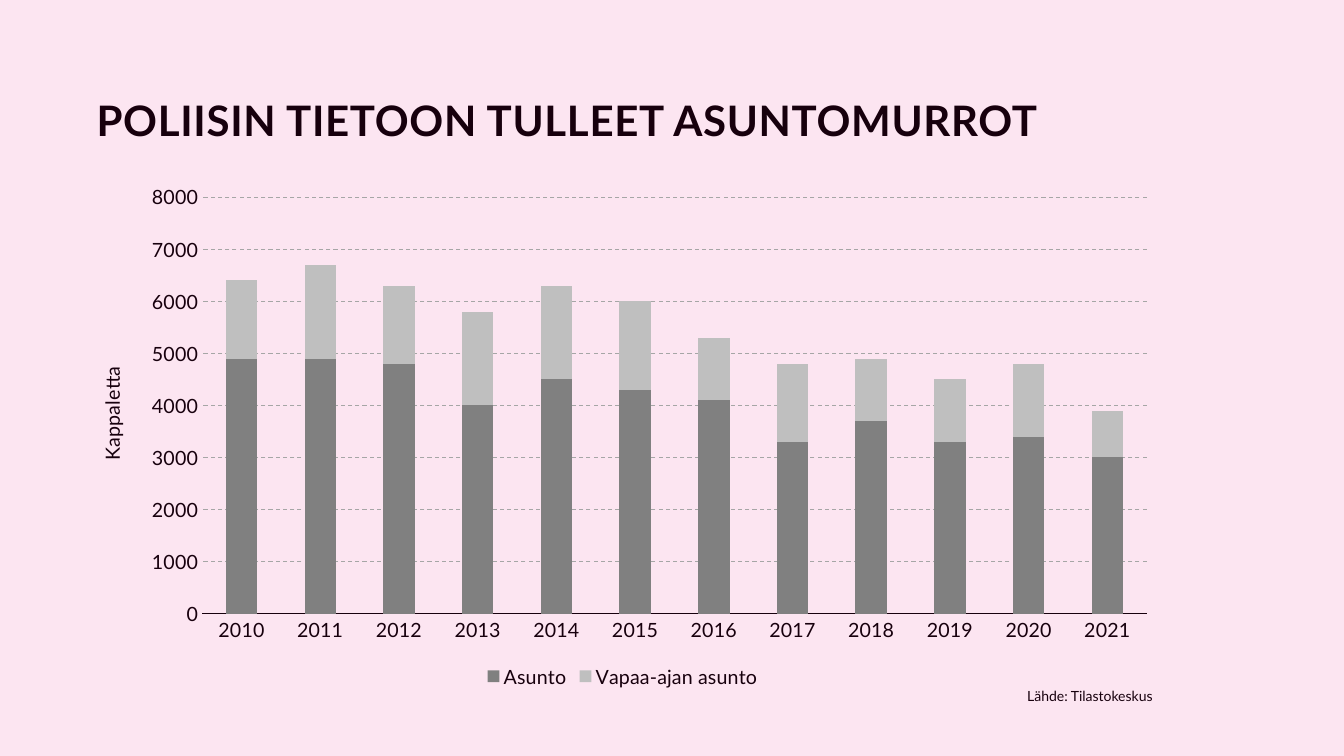
from dataclasses import dataclass

from lxml import etree
from pptx import Presentation
from pptx import util as u
from pptx.chart import data as cd
from pptx.dml.color import RGBColor
from pptx.enum import chart as ch, dml, text
from pptx.oxml import ns


@dataclass(frozen=True)
class Theme:
    font: str = "Lato"
    ground: str = "FCE5F1"
    ink: str = "17000D"
    grid: str = "A6A6A6"
    head: float = 30
    body: float = 14
    note: float = 10
    rule: float = 0.75


@dataclass(frozen=True)
class Box:
    """Place on the slide, in percent of its width and height."""
    left: float
    top: float
    width: float
    height: float


@dataclass(frozen=True)
class Series:
    name: str
    color: str
    vals: tuple[int, ...]


THEME = Theme()
WIDTH, HEIGHT = u.Inches(13.33), u.Inches(7.5)
YEARS = [str(year) for year in range(2010, 2022)]
HOMES = [
    Series("Asunto", "808080", (4900, 4900, 4800, 4000, 4500, 4300,
                                4100, 3300, 3700, 3300, 3400, 3000)),
    Series("Vapaa-ajan asunto", "BFBFBF", (1500, 1800, 1500, 1800, 1800, 1700,
                                           1200, 1500, 1200, 1200, 1400, 900)),
]
# Inner plot area as shares of the chart frame
PLOT = {"x": 0.115, "y": 0.042, "w": 0.865, "h": 0.806}


def place(box: Box) -> tuple[int, int, int, int]:
    return (int(WIDTH * box.left / 100), int(HEIGHT * box.top / 100),
            int(WIDTH * box.width / 100), int(HEIGHT * box.height / 100))


def style(font, size: float, bold: bool = False) -> None:
    font.name, font.size, font.bold = THEME.font, u.Pt(size), bold
    font.color.rgb = RGBColor.from_string(THEME.ink)


def write(slide, words: str, box: Box, *, size: float, bold: bool = False,
          anchor=text.MSO_ANCHOR.TOP, lines: float = 1.0,
          space: int = 0) -> None:
    frame = slide.shapes.add_textbox(*place(box)).text_frame
    frame.word_wrap = True
    frame.vertical_anchor = anchor
    para = frame.paragraphs[0]
    para.line_spacing = lines
    run = para.add_run()
    run.text = words
    style(run.font, size, bold)
    if space:
        run.font._element.set("spc", str(space))


def rule(line, color: str) -> None:
    line.color.rgb = RGBColor.from_string(color)
    line.width = u.Pt(THEME.rule)


def fix_plot(chart) -> None:
    """Pin the inner plot area to its shares of the chart frame."""
    area = chart._chartSpace.find(".//" + ns.qn("c:plotArea"))
    for old in area.findall(ns.qn("c:layout")):
        area.remove(old)
    layout = etree.Element(ns.qn("c:layout"))
    manual = etree.SubElement(layout, ns.qn("c:manualLayout"))
    parts = {"layoutTarget": "inner", "xMode": "edge", "yMode": "edge", **PLOT}
    for tag, val in parts.items():
        etree.SubElement(manual, ns.qn(f"c:{tag}")).set("val", str(val))
    area.insert(0, layout)


def draw_chart(slide, box: Box) -> None:
    data = cd.CategoryChartData()
    data.categories = YEARS
    for home in HOMES:
        data.add_series(home.name, home.vals)
    chart = slide.shapes.add_chart(
        ch.XL_CHART_TYPE.COLUMN_STACKED, *place(box), data).chart
    chart.has_title = False
    style(chart.font, THEME.body)

    # Columns
    plot = chart.plots[0]
    plot.gap_width, plot.overlap, plot.vary_by_categories = 150, 100, False
    for item, home in zip(plot.series, HOMES):
        item.format.fill.solid()
        item.format.fill.fore_color.rgb = RGBColor.from_string(home.color)

    # Axes
    years, count = chart.category_axis, chart.value_axis
    for axis in (years, count):
        axis.major_tick_mark = axis.minor_tick_mark = ch.XL_TICK_MARK.NONE
        style(axis.tick_labels.font, THEME.body)
    rule(years.format.line, THEME.ink)
    count.format.line.fill.background()
    count.minimum_scale, count.maximum_scale, count.major_unit = 0, 8000, 1000
    grid = count.major_gridlines.format.line
    rule(grid, THEME.grid)
    grid.dash_style = dml.MSO_LINE.DASH
    title = count.axis_title.text_frame
    title.text = "Kappaletta"
    style(title.paragraphs[0].runs[0].font, THEME.body)

    # Legend
    chart.has_legend = True
    chart.legend.position = ch.XL_LEGEND_POSITION.BOTTOM
    chart.legend.include_in_layout = False
    style(chart.legend.font, THEME.body)
    fix_plot(chart)


def main() -> None:
    deck = Presentation()
    deck.slide_width, deck.slide_height = WIDTH, HEIGHT
    slide = deck.slides.add_slide(deck.slide_layouts[6])

    # Ground
    fill = slide.background.fill
    fill.solid()
    fill.fore_color.rgb = RGBColor.from_string(THEME.ground)

    # Heading, chart and source
    write(slide, "POLIISIN TIETOON TULLEET ASUNTOMURROT",
          Box(6.45, 0.27, 83.72, 19.6), size=THEME.head, bold=True,
          anchor=text.MSO_ANCHOR.BOTTOM, lines=0.9, space=50)
    draw_chart(slide, Box(5.7, 23.2, 81.25, 68.4))
    write(slide, "Lähde: Tilastokeskus", Box(75.69, 90.27, 12, 3.6),
          size=THEME.note)
    deck.save("out.pptx")


if __name__ == "__main__":
    main()
